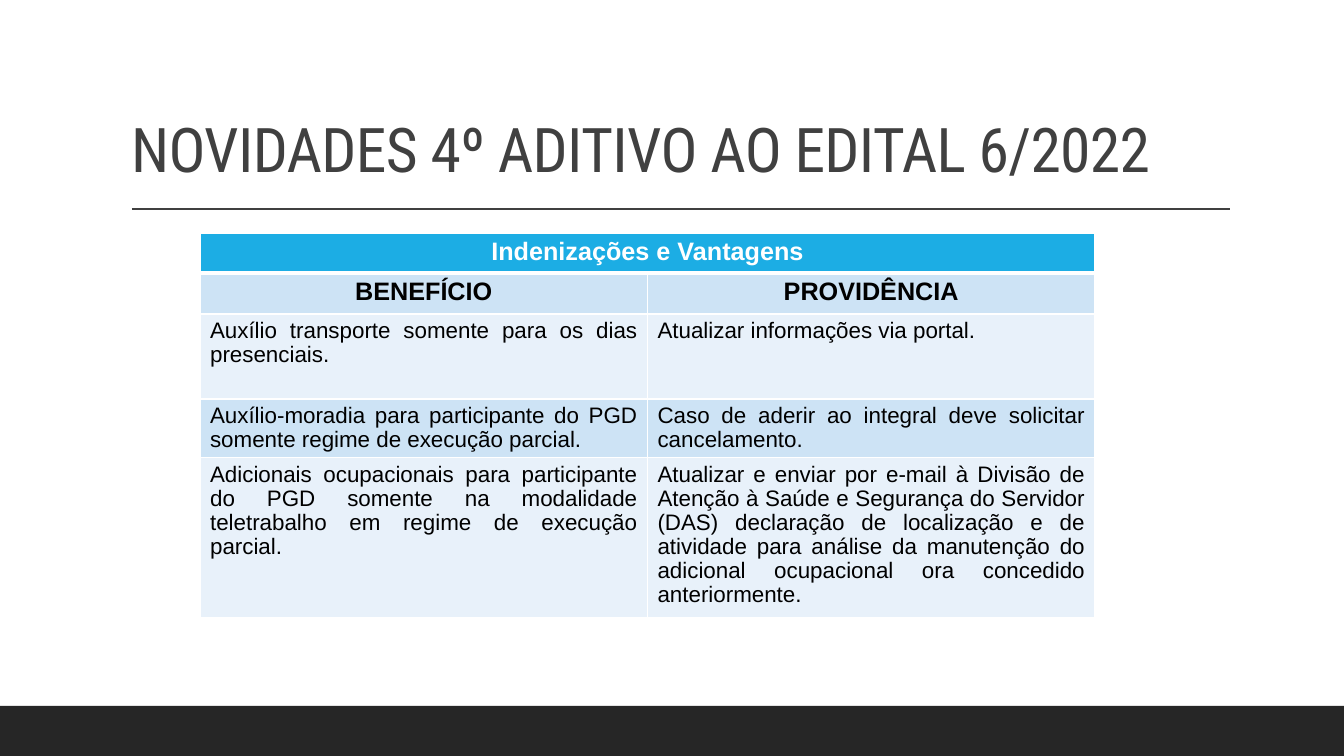
from lxml import etree
from pptx import Presentation, util as u
from pptx.dml.color import RGBColor
from pptx.enum import shapes, text
from pptx.oxml import ns

PX = 914400 / 100.8
COLORS = {
    "white": "FFFFFF", "black": "000000", "ink": "404040", "footer": "262626",
    "header": "1CADE4", "band_dark": "CDE3F5", "band_light": "E8F1FA",
}
HEADING = "Indenizações e Vantagens"
COLUMNS = ("BENEFÍCIO", "PROVIDÊNCIA")
BENEFITS = [
    ("Auxílio transporte somente para os dias presenciais.",
     "Atualizar informações via portal."),
    ("Auxílio-moradia para participante do PGD somente regime de execução parcial.",
     "Caso de aderir ao integral deve solicitar cancelamento."),
    ("Adicionais ocupacionais para participante do PGD somente na modalidade "
     "teletrabalho em regime de execução parcial.",
     "Atualizar e enviar por e-mail à Divisão de Atenção à Saúde e Segurança do "
     "Servidor (DAS) declaração de localização e de atividade para análise da "
     "manutenção do adicional ocupacional ora concedido anteriormente."),
]
ROW_HEIGHTS = (40, 41, 85, 59, 160)


def px(*lengths):
    return [u.Emu(round(length * PX)) for length in lengths]


def color(name):
    return RGBColor.from_string(COLORS[name])


def add_footer(slide, left, top, width, height):
    bar = slide.shapes.add_shape(
        shapes.MSO_SHAPE.RECTANGLE, *px(left, top, width, height))
    bar.shadow.inherit = False
    bar.fill.solid()
    bar.fill.fore_color.rgb = color("footer")
    bar.line.fill.background()


def add_title(slide, left, top, width, height):
    """Fill the title placeholder and draw the rule below it."""
    title = slide.shapes.title
    title.left, title.top, title.width, title.height = px(left, top, width, height)
    frame = title.text_frame
    frame.text = "NOVIDADES 4º ADITIVO AO EDITAL 6/2022"
    frame.word_wrap = True
    frame.vertical_anchor = text.MSO_ANCHOR.BOTTOM
    paragraph = frame.paragraphs[0]
    paragraph.alignment = text.PP_ALIGN.LEFT
    paragraph.line_spacing = 0.9
    paragraph.font.name = "Roboto Condensed"
    paragraph.font.size = u.Pt(44)
    paragraph.font.color.rgb = color("ink")
    paragraph.runs[0].font._element.set("spc", "-50")

    rule_y = top + height + 18
    rule = slide.shapes.add_connector(
        shapes.MSO_CONNECTOR.STRAIGHT,
        *px(left + 11, rule_y, left + width, rule_y))
    rule.line.color.rgb = color("ink")
    rule.line.width = u.Pt(1)
    etree.SubElement(rule._element.spPr, ns.qn("a:effectLst"))


def set_borders(cell, bottom):
    """Draw white edges of 1 pt, with the given width at the bottom."""
    properties = cell._tc.get_or_add_tcPr()
    for index, edge in enumerate(("lnL", "lnR", "lnT", "lnB")):
        width = bottom if edge == "lnB" else 1
        line = etree.Element(ns.qn(f"a:{edge}"), w=str(u.Pt(width)))
        fill = etree.SubElement(line, ns.qn("a:solidFill"))
        etree.SubElement(fill, ns.qn("a:srgbClr"), val=COLORS["white"])
        properties.insert(index, line)


def format_cell(cell, row):
    is_heading, is_body = row == 0, row > 1
    cell.fill.solid()
    band = "band_dark" if row % 2 else "band_light"
    cell.fill.fore_color.rgb = color("header" if is_heading else band)
    set_borders(cell, 3 if is_heading else 1)
    paragraph = cell.text_frame.paragraphs[0]
    paragraph.alignment = text.PP_ALIGN.JUSTIFY if is_body else text.PP_ALIGN.CENTER
    if is_body:
        paragraph.line_spacing = 0.97
    paragraph.font.name = "Arial"
    paragraph.font.size = u.Pt(16 if is_body else 18)
    paragraph.font.bold = not is_body
    paragraph.font.color.rgb = color("white" if is_heading else "black")


def add_benefits(slide, left, top, width):
    rows = [(HEADING, ""), COLUMNS, *BENEFITS]
    table = slide.shapes.add_table(
        len(rows), len(COLUMNS), *px(left, top, width, sum(ROW_HEIGHTS))).table
    for column in table.columns:
        column.width, = px(width / len(COLUMNS))
    for row, (height, wording) in enumerate(zip(ROW_HEIGHTS, rows)):
        table.rows[row].height, = px(height)
        for column, words in enumerate(wording):
            cell = table.cell(row, column)
            cell.text = words
            format_cell(cell, row)
    table.cell(0, 0).merge(table.cell(0, len(COLUMNS) - 1))


def main():
    presentation = Presentation()
    presentation.slide_width, presentation.slide_height = px(1344, 756)
    slide = presentation.slides.add_slide(presentation.slide_layouts[5])
    add_footer(slide, 0, 706, 1344, 50)
    add_title(slide, 121, 31, 1109, 160)
    add_benefits(slide, 200, 233, 895)
    presentation.save("out.pptx")


if __name__ == "__main__":
    main()
